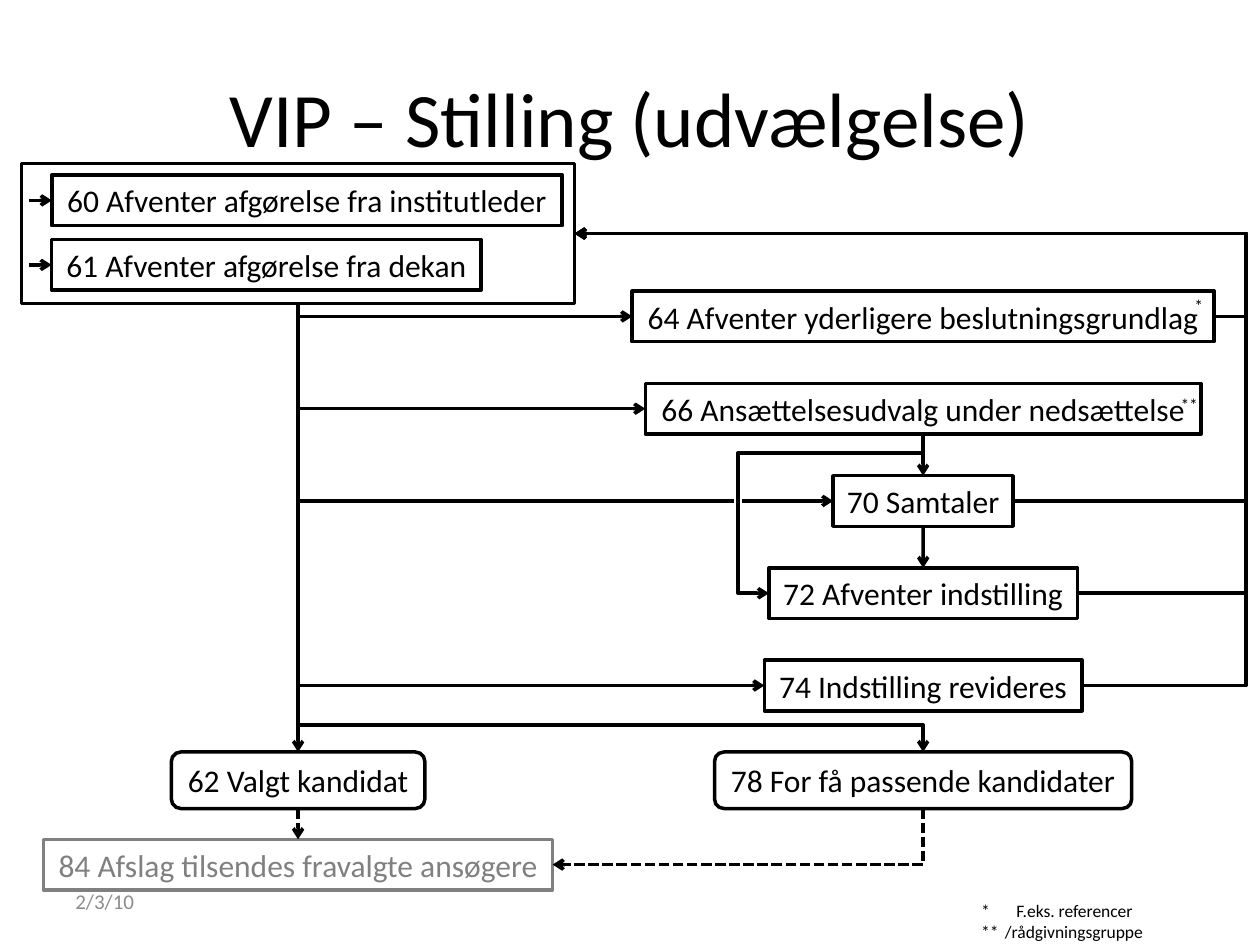
from lxml import etree
from pptx import Presentation
from pptx.dml.color import RGBColor
from pptx.enum.dml import MSO_LINE
from pptx.enum.shapes import MSO_CONNECTOR, MSO_SHAPE
from pptx.enum.text import MSO_ANCHOR, PP_ALIGN
from pptx.oxml.ns import qn
from pptx.util import Cm, Pt

PROCESS = MSO_SHAPE.FLOWCHART_PROCESS
ROUNDED = MSO_SHAPE.FLOWCHART_ALTERNATE_PROCESS
STRAIGHT, ELBOW = MSO_CONNECTOR.STRAIGHT, MSO_CONNECTOR.ELBOW
DASH = MSO_LINE.SQUARE_DOT
LEFT, CENTER = PP_ALIGN.LEFT, PP_ALIGN.CENTER
TOP, MIDDLE = MSO_ANCHOR.TOP, MSO_ANCHOR.MIDDLE
SIDE_TOP, SIDE_LEFT, SIDE_BOTTOM, SIDE_RIGHT = range(4)
COLORS = {"ink": "000000", "muted": "808080", "date": "8C8C8C", "paper": "FFFFFF"}


def write_text(shape, lines, size, color, align, anchor, wrap):
    frame = shape.text_frame
    frame.word_wrap = wrap
    frame.vertical_anchor = anchor
    for index, line in enumerate(lines):
        paragraph = frame.add_paragraph() if index else frame.paragraphs[0]
        paragraph.alignment = align
        run = paragraph.add_run()
        run.text = line
        run.font.name = "Calibri"
        run.font.size = Pt(size)
        run.font.color.rgb = RGBColor.from_string(COLORS[color])


def style_arrow(connector, dashed=False, preset=None, adjustments=()):
    connector.line.color.rgb = RGBColor.from_string(COLORS["ink"])
    connector.line.width = Pt(2)
    if dashed:
        connector.line.dash_style = DASH
    properties = connector._element.spPr
    etree.SubElement(properties.find(qn("a:ln")), qn("a:tailEnd"), type="arrow")
    etree.SubElement(properties, qn("a:effectLst"))
    geometry = properties.find(qn("a:prstGeom"))
    if preset:
        geometry.set("prst", preset)
    for number, ratio in enumerate(adjustments, 1):
        etree.SubElement(geometry.find(qn("a:avLst")), qn("a:gd"),
                         name=f"adj{number}", fmla=f"val {round(ratio * 100000)}")


presentation = Presentation()
presentation.slide_width, presentation.slide_height = Cm(25.4), Cm(19.05)
slide = presentation.slides.add_slide(presentation.slide_layouts[6])
shapes = slide.shapes

# Layout: two columns, evenly spaced rows on the right, outcomes below
MAIN_X, SIDE_X, RETURN_X = 6.01, 18.61, 25.12
ROW_TOP, ROW_STEP = 5.87, 1.86
BOX_HEIGHT, OUTCOME_HEIGHT, OUTCOME_TOP = 1.02, 1.14, 15.16
FRAME_TOP, FRAME_WIDTH, FRAME_HEIGHT = 3.3, 11.15, 2.82
FRAME_BOTTOM = FRAME_TOP + FRAME_HEIGHT
FRAME_RIGHT = MAIN_X + FRAME_WIDTH / 2

# Title, date and footnote marks
for text, left, top, width, height, size, color, align, anchor, wrap in [
    ("VIP – Stilling (udvælgelse)", 1.27, 0.76, 22.86, 3.18, 44, "ink", CENTER, MIDDLE, True),
    ("2/3/10", 1.27, 17.65, 5.92, 1.02, 12, "date", LEFT, MIDDLE, True),
    ("**", 23.55, 7.82, 0.86, 0.69, 10, "ink", LEFT, TOP, False),
    ("*", 23.83, 5.82, 0.69, 0.69, 10, "ink", LEFT, TOP, False),
]:
    shape = shapes.add_textbox(Cm(left), Cm(top), Cm(width), Cm(height))
    write_text(shape, [text], size, color, align, anchor, wrap)

# Footnotes with hanging indents
footnotes = shapes.add_textbox(Cm(19.53), Cm(18.01), Cm(5.61), Cm(1.12))
write_text(footnotes, ["*\tF.eks. referencer", "**\t/rådgivningsgruppe"],
           10, "ink", LEFT, TOP, True)
for paragraph, indent in zip(footnotes.text_frame.paragraphs, (0.71, 0.48)):
    properties = paragraph._p.get_or_add_pPr()
    properties.set("marL", str(Cm(indent)))
    properties.set("indent", str(-Cm(indent)))

# Boxes: text, centre, top, width, height, preset, colour
box_specs = [
    ("", MAIN_X, FRAME_TOP, FRAME_WIDTH, FRAME_HEIGHT, PROCESS, "ink"),
    ("60 Afventer afgørelse fra institutleder", 6.19, 3.53, 10.29, BOX_HEIGHT, PROCESS, "ink"),
    ("61 Afventer afgørelse fra dekan", 5.37, 4.83, 8.66, BOX_HEIGHT, PROCESS, "ink"),
    ("62 Valgt kandidat", MAIN_X, OUTCOME_TOP, 5.11, OUTCOME_HEIGHT, ROUNDED, "ink"),
    ("78 For få passende kandidater", SIDE_X, OUTCOME_TOP, 8.41, OUTCOME_HEIGHT, ROUNDED, "ink"),
    ("84 Afslag tilsendes fravalgte ansøgere", MAIN_X, 16.92, 10.26, BOX_HEIGHT, PROCESS, "muted"),
]
for row, (text, width) in enumerate([
    ("64 Afventer yderligere beslutningsgrundlag", 11.73),
    ("66 Ansættelsesudvalg under nedsættelse", 11.2),
    ("70 Samtaler", 3.63),
    ("72 Afventer indstilling", 6.22),
    ("74 Indstilling revideres", 6.4),
]):
    box_specs.append((text, SIDE_X, ROW_TOP + row * ROW_STEP, width, BOX_HEIGHT, PROCESS, "ink"))

boxes = {}
for text, center, top, width, height, preset, color in box_specs:
    shape = shapes.add_shape(preset, Cm(center - width / 2), Cm(top), Cm(width), Cm(height))
    shape.shadow.inherit = False
    shape.fill.background()
    shape.line.color.rgb = RGBColor.from_string(COLORS[color])
    shape.line.width = Pt(2)
    if text:
        write_text(shape, [text], 18, color, CENTER, MIDDLE, False)
    boxes[text[:2] or "frame"] = shape

# Straight arrows between boxes
for start, end, dashed in [("frame", "62", False), ("62", "84", True),
                           ("66", "70", False), ("70", "72", False)]:
    connector = shapes.add_connector(STRAIGHT, 0, 0, 0, 0)
    connector.begin_connect(boxes[start], SIDE_BOTTOM)
    connector.end_connect(boxes[end], SIDE_TOP)
    style_arrow(connector, dashed)

# Short entry arrows inside the frame
for name in ("60", "61"):
    middle = boxes[name].top + boxes[name].height // 2
    connector = shapes.add_connector(STRAIGHT, Cm(0.58), middle, boxes[name].left, middle)
    connector.end_connect(boxes[name], SIDE_LEFT)
    style_arrow(connector)

# Return routes along the right edge
for name in ("64", "70", "72", "74"):
    connector = shapes.add_connector(ELBOW, 0, 0, 0, 0)
    connector.begin_connect(boxes[name], SIDE_RIGHT)
    connector.end_connect(boxes["frame"], SIDE_RIGHT)
    start = (boxes[name].left + boxes[name].width) / Cm(1)
    style_arrow(connector, adjustments=[(start - RETURN_X) / (start - FRAME_RIGHT)])

# Routes that leave downwards: start, end, preset, adjustments, dashed
routes = [
    ((MAIN_X, FRAME_BOTTOM),
     (boxes[name].left / Cm(1), ROW_TOP + row * ROW_STEP + BOX_HEIGHT / 2),
     "bentConnector2", [], False)
    for row, name in [(0, "64"), (1, "66"), (2, "70"), (4, "74")]
]
routes += [
    ((MAIN_X, FRAME_BOTTOM), (SIDE_X, OUTCOME_TOP), "bentConnector3", [0.94], False),
    ((SIDE_X, OUTCOME_TOP + OUTCOME_HEIGHT), (MAIN_X + 5.13, 17.43), "bentConnector2", [], True),
    ((SIDE_X, ROW_TOP + ROW_STEP + BOX_HEIGHT), (15.5, ROW_TOP + 3 * ROW_STEP + BOX_HEIGHT / 2),
     "bentConnector4", [0.12, 1.2], False),
]
for (x1, y1), (x2, y2), preset, adjustments, dashed in routes:
    if preset == "bentConnector4":
        # Gap in the line to 70 where this route crosses it
        gap = shapes.add_shape(MSO_SHAPE.RECTANGLE, Cm(14.81), Cm(9.86), Cm(0.13), Cm(0.48))
        gap.shadow.inherit = False
        gap.fill.solid()
        gap.fill.fore_color.rgb = RGBColor.from_string(COLORS["paper"])
        gap.line.color.rgb = RGBColor.from_string(COLORS["paper"])
        gap.line.width = Pt(0.75)
    # A quarter turn makes the elbow start vertically; rightward routes are mirrored
    center_x, center_y = (x1 + x2) / 2, (y1 + y2) / 2
    half_width, half_height = (y2 - y1) / 2, abs(x2 - x1) / 2
    rightward = x2 > x1
    begin_offset = half_width if rightward else -half_width
    connector = shapes.add_connector(
        ELBOW, Cm(center_x + begin_offset), Cm(center_y - half_height),
        Cm(center_x - begin_offset), Cm(center_y + half_height))
    connector._element.spPr.xfrm.set("rot", str((270 if rightward else 90) * 60000))
    style_arrow(connector, dashed, preset, adjustments)

presentation.save("out.pptx")
